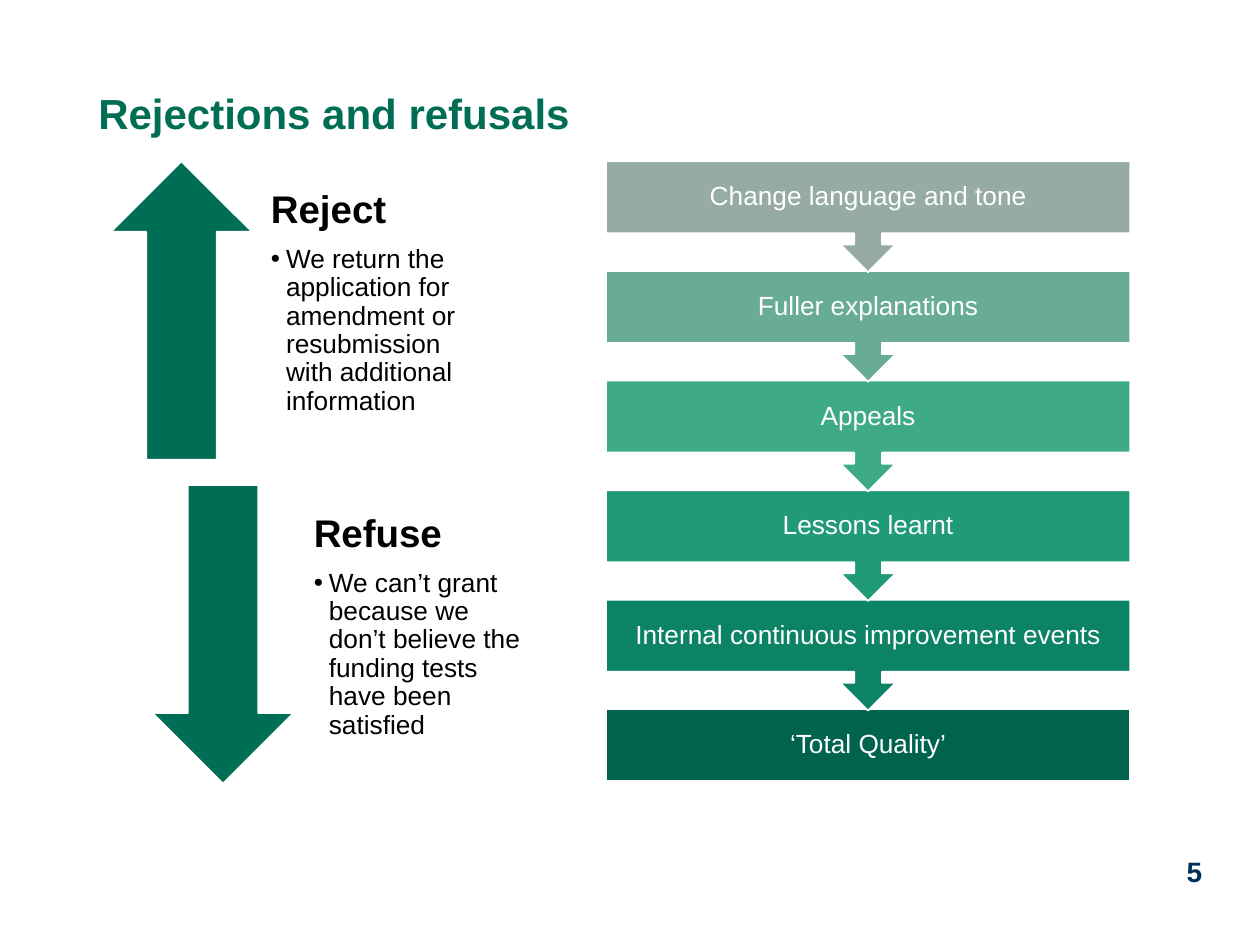
from dataclasses import dataclass

from lxml.etree import SubElement
from pptx import Presentation
from pptx.dml.color import RGBColor
from pptx.enum.shapes import MSO_SHAPE
from pptx.enum.text import MSO_ANCHOR, MSO_AUTO_SIZE, PP_ALIGN
from pptx.oxml.ns import qn
from pptx.util import Inches, Pt

COLORS = {
    "green": "006D55",
    "white": "FFFFFF",
    "black": "000000",
    "navy": "003057",
    "step1": "95ABA3",
    "step2": "68AC94",
    "step3": "3EAA88",
    "step4": "219A78",
    "step5": "0D8365",
    "step6": "00634D",
}
TOP = 1.28
STEP_PITCH = 0.87
STEP_BOX = (4.16, 0.57)
STEP_CALLOUT = (4.16, 0.88)
ARROW_SIZE = (1.12, 2.37)


@dataclass
class Outcome:
    heading: str
    detail: str
    arrow: MSO_SHAPE
    arrow_left: float
    text_left: float
    top: float


@dataclass
class Step:
    text: str
    color: str


OUTCOMES = [
    Outcome("Reject",
            "We return the application for amendment or resubmission with additional information",
            MSO_SHAPE.UP_ARROW, 0.88, 2.03, TOP),
    Outcome("Refuse",
            "We can’t grant because we don’t believe the funding tests have been satisfied",
            MSO_SHAPE.DOWN_ARROW, 1.21, 2.37, 3.85),
]
STEPS = [
    Step("Change language and tone", "step1"),
    Step("Fuller explanations", "step2"),
    Step("Appeals", "step3"),
    Step("Lessons learnt", "step4"),
    Step("Internal continuous improvement events", "step5"),
    Step("‘Total Quality’", "step6"),
]


def place(sp, left: float, top: float, width: float, height: float) -> None:
    sp.left, sp.top = Inches(left), Inches(top)
    sp.width, sp.height = Inches(width), Inches(height)


def set_frame(tf, margins: tuple, anchor: MSO_ANCHOR) -> None:
    tf.word_wrap = True
    tf.auto_size = MSO_AUTO_SIZE.NONE
    tf.vertical_anchor = anchor
    tf.margin_left, tf.margin_top, tf.margin_right, tf.margin_bottom = map(Inches, margins)


def add_text(p, text: str, size: float, color: str, bold: bool = False,
             align: PP_ALIGN = PP_ALIGN.LEFT, after: float = 0) -> None:
    p.alignment = align
    p.line_spacing = 0.9
    p.space_before = Pt(0)
    p.space_after = Pt(after)
    r = p.add_run()
    r.text = text
    r.font.name = "Arial"
    r.font.size = Pt(size)
    r.font.bold = bold
    r.font.color.rgb = RGBColor.from_string(COLORS[color])


def set_bullet(p, char: str | None, indent: float) -> None:
    pPr = p._p.get_or_add_pPr()
    pPr.set("marL", str(Inches(indent)))
    pPr.set("indent", str(-Inches(indent)))
    if char:
        SubElement(pPr, qn("a:buChar"), char=char)
    else:
        SubElement(pPr, qn("a:buNone"))


def add_filled(s, kind: MSO_SHAPE, left: float, top: float, size: tuple, color: str):
    sp = s.shapes.add_shape(kind, *map(Inches, (left, top, *size)))
    sp.shadow.inherit = False
    sp.fill.solid()
    sp.fill.fore_color.rgb = RGBColor.from_string(COLORS[color])
    sp.line.color.rgb = RGBColor.from_string(COLORS["white"])
    sp.line.width = Pt(1)
    return sp


def add_outcome(s, body, outcome: Outcome) -> None:
    add_filled(s, outcome.arrow, outcome.arrow_left, outcome.top, ARROW_SIZE, "green")
    place(body, outcome.text_left, outcome.top, 1.9, ARROW_SIZE[1])
    tf = body.text_frame
    set_frame(tf, (0.12, 0, 0.12, 0.12), MSO_ANCHOR.MIDDLE)
    p = tf.paragraphs[0]
    set_bullet(p, None, 0)
    add_text(p, outcome.heading, 22, "black", bold=True, after=8)
    p = tf.add_paragraph()
    p.level = 1
    set_bullet(p, "•", 0.12)
    add_text(p, outcome.detail, 15, "black", after=2)


def add_step(s, step: Step, index: int) -> None:
    last = index == len(STEPS) - 1
    kind = MSO_SHAPE.RECTANGLE if last else MSO_SHAPE.DOWN_ARROW_CALLOUT
    size = STEP_BOX if last else STEP_CALLOUT
    sp = add_filled(s, kind, 4.81, TOP + index * STEP_PITCH, size, step.color)
    set_frame(sp.text_frame, (0.12, 0.12, 0.12, 0.12), MSO_ANCHOR.MIDDLE)
    add_text(sp.text_frame.paragraphs[0], step.text, 15, "white", align=PP_ALIGN.CENTER)


def main() -> None:
    prs = Presentation()
    prs.slide_width, prs.slide_height = Inches(10), Inches(7.5)
    s = prs.slides.add_slide(prs.slide_layouts[3])

    title = s.shapes.title
    place(title, 0.78, 0.74, 8.44, 0.38)
    set_frame(title.text_frame, (0, 0, 0, 0), MSO_ANCHOR.TOP)
    add_text(title.text_frame.paragraphs[0], "Rejections and refusals", 24, "green", bold=True)

    for index, outcome in enumerate(OUTCOMES, start=1):
        add_outcome(s, s.placeholders[index], outcome)

    for index, step in reversed(list(enumerate(STEPS))):
        add_step(s, step, index)

    number = s.shapes.add_textbox(*map(Inches, (9.33, 6.81, 0.3, 0.28)))
    set_frame(number.text_frame, (0, 0, 0, 0), MSO_ANCHOR.TOP)
    add_text(number.text_frame.paragraphs[0], "5", 16, "navy", bold=True, align=PP_ALIGN.CENTER)

    prs.save("out.pptx")


if __name__ == "__main__":
    main()
